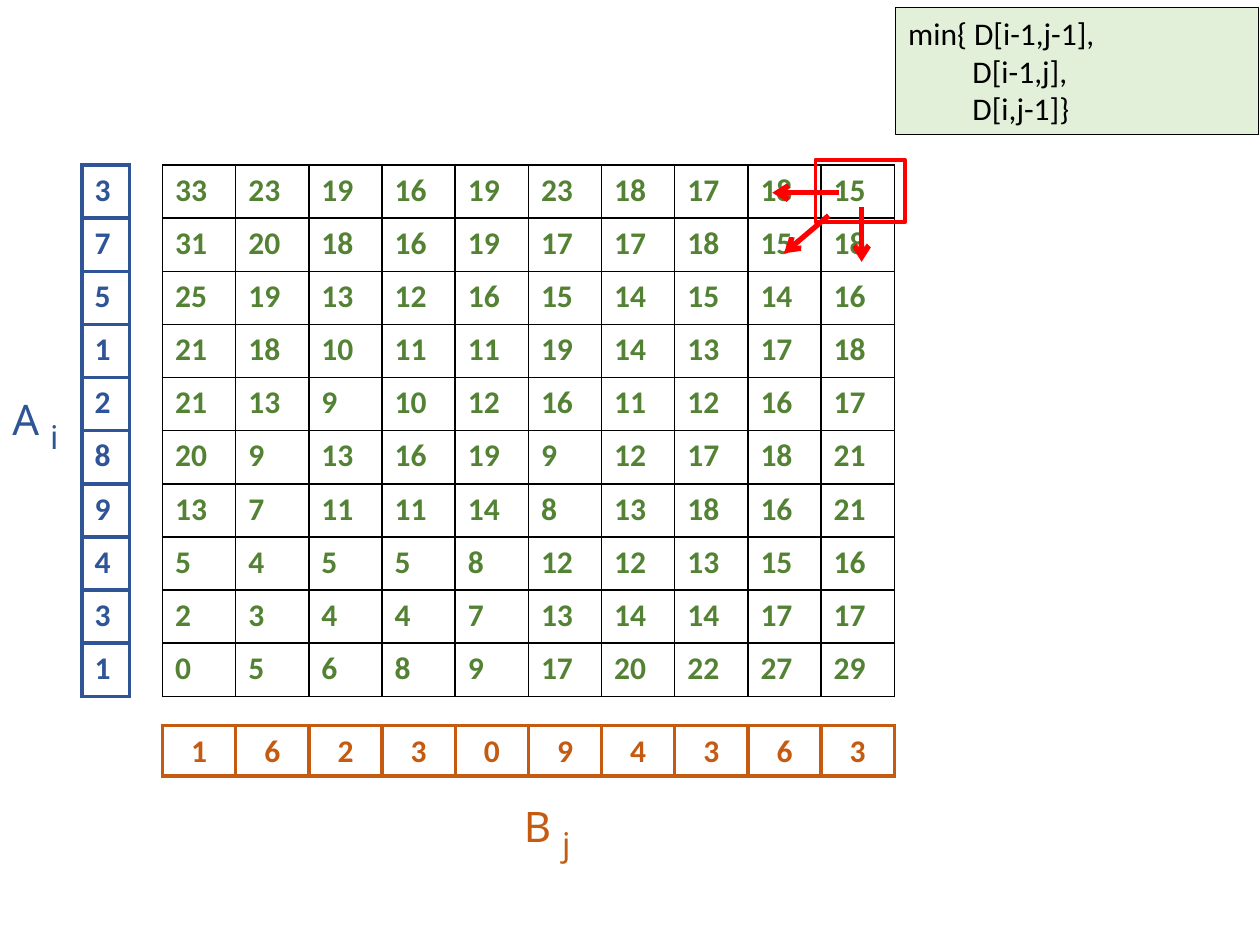
import dataclasses

import lxml.etree
import pptx
import pptx.dml.color
import pptx.enum.shapes
import pptx.enum.text
import pptx.oxml.ns
import pptx.util

Inches = pptx.util.Inches
Pt = pptx.util.Pt
qn = pptx.oxml.ns.qn
ALIGN = pptx.enum.text.PP_ALIGN


@dataclasses.dataclass(frozen=True)
class Theme:
    series_a: str = "2F5597"
    series_b: str = "C55A11"
    cost: str = "548235"
    note: str = "E2F0D9"
    ink: str = "000000"
    accent: str = "FF0000"
    body_font: str = "Calibri"
    label_font: str = "Noto Sans"
    body_size: int = 18
    label_size: int = 24
    index_size: int = 32


@dataclasses.dataclass(frozen=True)
class Grid:
    """The cost matrix; positions count columns and rows from its top left."""
    left: float = 1.29
    top: float = 1.31
    column: float = 0.58
    row: float = 0.42

    def point(self, column, row):
        return (Inches(self.left + column * self.column),
                Inches(self.top + row * self.row))

    def size(self, columns, rows):
        return Inches(columns * self.column), Inches(rows * self.row)


THEME = Theme()
GRID = Grid(column=0.581, row=0.422)

SERIES_A = [3, 7, 5, 1, 2, 8, 9, 4, 3, 1]
SERIES_B = [1, 6, 2, 3, 0, 9, 4, 3, 6, 3]
COSTS = [
    [33, 23, 19, 16, 19, 23, 18, 17, 18, 15],
    [31, 20, 18, 16, 19, 17, 17, 18, 15, 18],
    [25, 19, 13, 12, 16, 15, 14, 15, 14, 16],
    [21, 18, 10, 11, 11, 19, 14, 13, 17, 18],
    [21, 13, 9, 10, 12, 16, 11, 12, 16, 17],
    [20, 9, 13, 16, 19, 9, 12, 17, 18, 21],
    [13, 7, 11, 11, 14, 8, 13, 18, 16, 21],
    [5, 4, 5, 5, 8, 12, 12, 13, 15, 16],
    [2, 3, 4, 4, 7, 13, 14, 14, 17, 17],
    [0, 5, 6, 8, 9, 17, 20, 22, 27, 29],
]
FORMULA = ["min{ D[i-1,j-1],", "D[i-1,j],", "D[i,j-1]}"]
STEPS = [  # start and end of each arrow, in columns and rows
    ((9.1, 0.95), (8.49, 1.66)),
    ((9.55, 0.78), (9.55, 1.82)),
    ((9.24, 0.52), (8.33, 0.52)),
]


def rgb(color):
    return pptx.dml.color.RGBColor.from_string(color)


def set_font(font, color, size, name, bold=False):
    font.color.rgb = rgb(color)
    font.size = Pt(size)
    font.name = name
    font.bold = bold


def set_borders(cell, color, width):
    properties = cell._tc.get_or_add_tcPr()
    for side in ("a:lnL", "a:lnR", "a:lnT", "a:lnB"):
        line = lxml.etree.SubElement(properties, qn(side), w=str(Pt(width)))
        fill = lxml.etree.SubElement(line, qn("a:solidFill"))
        lxml.etree.SubElement(fill, qn("a:srgbClr"), val=color)


def add_number_table(page, rows, position, size, color, border, border_width,
                     align=ALIGN.LEFT):
    table = page.shapes.add_table(len(rows), len(rows[0]), *position, *size).table
    table.first_row = table.horz_banding = False
    for row, values in enumerate(rows):
        for column, value in enumerate(values):
            cell = table.cell(row, column)
            set_borders(cell, border, border_width)
            cell.fill.background()
            para = cell.text_frame.paragraphs[0]
            para.text = str(value)
            para.alignment = align
            set_font(para.font, color, THEME.body_size, THEME.body_font, bold=True)


def add_indexed_label(page, name, index, left, top, color):
    """A letter followed by its subscript."""
    box = page.shapes.add_textbox(Inches(left), Inches(top), Inches(0.67), Inches(0.5))
    box.text_frame.word_wrap = True
    para = box.text_frame.paragraphs[0]
    for text, size in ((name + " ", THEME.label_size), (index, THEME.index_size)):
        span = para.add_run()
        span.text = text
        set_font(span.font, color, size, THEME.label_font)
    span.font._element.set("baseline", "-25000")


def add_rectangle(page, position, size, line_color, line_width, fill=None):
    box = page.shapes.add_shape(
        pptx.enum.shapes.MSO_SHAPE.RECTANGLE, *position, *size)
    box.shadow.inherit = False
    box.line.color.rgb = rgb(line_color)
    box.line.width = Pt(line_width)
    if fill:
        box.fill.solid()
        box.fill.fore_color.rgb = rgb(fill)
    else:
        box.fill.background()
    return box


def add_formula(page):
    box = add_rectangle(page, (Inches(7.11), Inches(0.06)),
                        (Inches(2.88), Inches(1.01)), THEME.ink, 0.75, THEME.note)
    frame = box.text_frame
    frame.word_wrap = True
    frame.vertical_anchor = pptx.enum.text.MSO_ANCHOR.TOP
    frame.text = "\n".join(FORMULA)
    for number, para in enumerate(frame.paragraphs):
        para.alignment = ALIGN.LEFT
        set_font(para.font, THEME.ink, THEME.body_size, THEME.body_font)
        if number:
            para._p.get_or_add_pPr().set("marL", str(Inches(0.51)))


def add_arrow(group, start, end):
    arrow = group.shapes.add_connector(
        pptx.enum.shapes.MSO_CONNECTOR.STRAIGHT,
        *GRID.point(*start), *GRID.point(*end))
    arrow.line.color.rgb = rgb(THEME.accent)
    arrow.line.width = Pt(3)
    lxml.etree.SubElement(arrow.line._get_or_add_ln(), qn("a:tailEnd"), type="arrow")
    lxml.etree.SubElement(arrow._element.spPr, qn("a:effectLst"))


def main():
    deck = pptx.Presentation()
    deck.slide_width, deck.slide_height = Inches(10), Inches(7.5)
    page = deck.slides.add_slide(deck.slide_layouts[6])
    count = len(COSTS)
    matrix_width, matrix_height = GRID.size(count, count)

    add_number_table(page, [[value] for value in SERIES_A],
                     (Inches(0.65), Inches(GRID.top)), (Inches(0.38), matrix_height),
                     THEME.series_a, THEME.series_a, 2.25)
    add_indexed_label(page, "A", "i", 0, 2.96, THEME.series_a)
    add_number_table(page, [SERIES_B], (Inches(GRID.left), Inches(5.76)),
                     (matrix_width, Inches(0.4)),
                     THEME.series_b, THEME.series_b, 2.25, ALIGN.CENTER)
    add_indexed_label(page, "B", "j", 4.06, 6.19, THEME.series_b)
    add_number_table(page, COSTS, GRID.point(0, 0), (matrix_width, matrix_height),
                     THEME.cost, THEME.ink, 1)
    add_formula(page)
    add_rectangle(page, GRID.point(8.92, -0.1), GRID.size(1.22, 1.18),
                  THEME.accent, 2.25)
    arrows = page.shapes.add_group_shape()
    for start, end in STEPS:
        add_arrow(arrows, start, end)
    deck.save("out.pptx")


if __name__ == "__main__":
    main()
